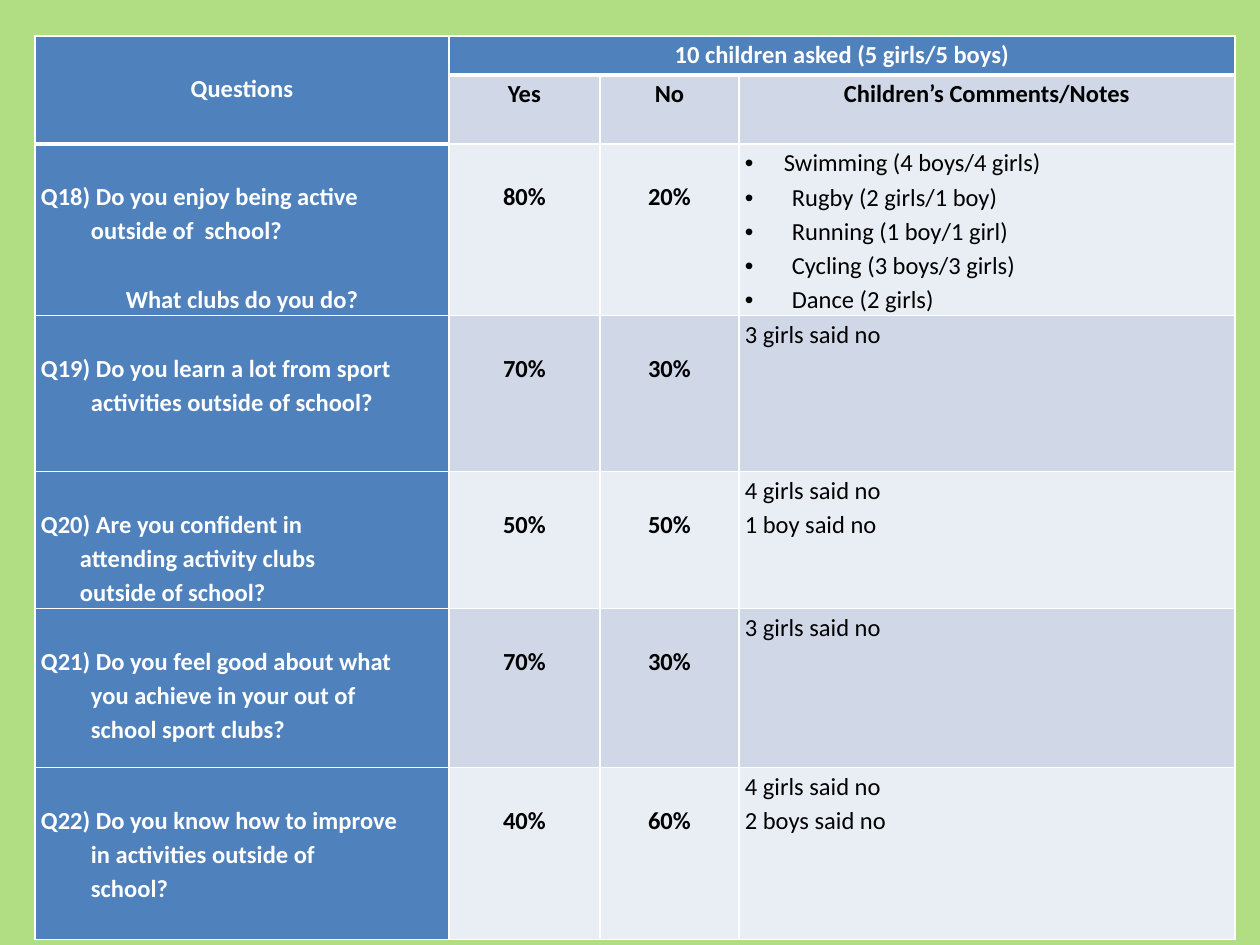
"""Build a slide with a table of children's answers about sport outside school."""

import dataclasses

import lxml.etree
import pptx
import pptx.dml.color
import pptx.enum.text
import pptx.oxml.ns
import pptx.table
import pptx.util

SCALE = 9144000 / 1260
FONT = "Calibri"
SIZE = 14
LINE = 34
COLUMNS = [414, 151, 139, 496]
ROWS = [39, 69, 171, 156, 137, 159, 172]
COLORS = {
    "page": "B2DE83",
    "header": "4F81BD",
    "dark band": "D0D8E8",
    "light band": "E9EDF4",
    "white": "FFFFFF",
    "black": "000000",
}
CENTER = pptx.enum.text.PP_ALIGN.CENTER
LEFT = pptx.enum.text.PP_ALIGN.LEFT


@dataclasses.dataclass(frozen=True)
class Line:
    text: str
    margin: int = 0
    bullet: bool = False
    centered: bool = False
    before: int = 0


@dataclasses.dataclass(frozen=True)
class Style:
    fill: str
    color: str = "black"
    bold: bool = True
    top: int = 0
    border_top: int = 1
    border_bottom: int = 1


@dataclasses.dataclass(frozen=True)
class Question:
    lines: list[Line]
    yes: int
    comments: list[Line]


QUESTIONS = [
    Question(
        [
            Line("Q18) Do you enjoy being active"),
            Line("outside of  school?", 50),
            Line("What clubs do you do?", centered=True, before=LINE),
        ],
        80,
        [
            Line("Swimming (4 boys/4 girls)", 39, True),
            Line("Rugby (2 girls/1 boy)", 47, True),
            Line("Running (1 boy/1 girl)", 47, True),
            Line("Cycling (3 boys/3 girls)", 47, True),
            Line("Dance (2 girls)", 47, True),
        ],
    ),
    Question(
        [
            Line("Q19) Do you learn a lot from sport"),
            Line("activities outside of school?", 50),
        ],
        70,
        [Line("3 girls said no")],
    ),
    Question(
        [
            Line("Q20) Are you confident in"),
            Line("attending activity clubs", 39),
            Line("outside of school?", 39),
        ],
        50,
        [Line("4 girls said no"), Line("1 boy said no")],
    ),
    Question(
        [
            Line("Q21) Do you feel good about what"),
            Line("you achieve in your out of", 50),
            Line("school sport clubs?", 50),
        ],
        70,
        [Line("3 girls said no")],
    ),
    Question(
        [
            Line("Q22) Do you know how to improve"),
            Line("in activities outside of", 50),
            Line("school?", 50),
        ],
        40,
        [Line("4 girls said no"), Line("2 boys said no")],
    ),
]


def px(length: int) -> pptx.util.Emu:
    return pptx.util.Emu(round(length * SCALE))


def rgb(name: str) -> pptx.dml.color.RGBColor:
    return pptx.dml.color.RGBColor.from_string(COLORS[name])


def add_child(parent, tag: str, **attributes: str):
    return lxml.etree.SubElement(parent, pptx.oxml.ns.qn(tag), attributes)


def format_cell(cell: pptx.table._Cell, style: Style) -> None:
    properties = cell._tc.get_or_add_tcPr()
    widths = {"L": 1, "R": 1, "T": style.border_top, "B": style.border_bottom}
    for side, width in widths.items():
        border = add_child(properties, f"a:ln{side}", w=str(pptx.util.Pt(width)))
        fill = add_child(border, "a:solidFill")
        add_child(fill, "a:srgbClr", val=COLORS["white"])
    cell.fill.solid()
    cell.fill.fore_color.rgb = rgb(style.fill)
    cell.margin_left = cell.margin_right = px(6)
    cell.margin_top, cell.margin_bottom = px(style.top), 0


def write_cell(cell: pptx.table._Cell, lines: list[Line], style: Style) -> None:
    format_cell(cell, style)
    frame = cell.text_frame
    for index, line in enumerate(lines):
        para = frame.add_paragraph() if index else frame.paragraphs[0]
        para.text = line.text
        para.alignment = CENTER if line.centered else LEFT
        para.line_spacing = 1.15
        para.space_before = px(line.before)
        properties = para._p.get_or_add_pPr()
        properties.set("marL", str(px(line.margin)))
        properties.set("indent", str(px(-line.margin if line.bullet else 0)))
        if line.bullet:
            add_child(properties, "a:buFont", typeface="Arial")
            add_child(properties, "a:buChar", char="•")
        para.font.name = FONT
        para.font.size = pptx.util.Pt(SIZE)
        para.font.bold = style.bold
        para.font.color.rgb = rgb(style.color)


def write_headings(table: pptx.table.Table) -> None:
    header = Style("header", "white", border_bottom=3)
    for column in range(len(COLUMNS)):
        format_cell(table.cell(0, column), header)
    format_cell(table.cell(1, 0), header)
    table.cell(0, 0).merge(table.cell(1, 0))
    table.cell(0, 1).merge(table.cell(0, 3))
    titles = {
        (0, 0): ("Questions", dataclasses.replace(header, top=LINE)),
        (0, 1): ("10 children asked (5 girls/5 boys)", header),
    }
    for column, text in enumerate(["Yes", "No", "Children’s Comments/Notes"], 1):
        titles[1, column] = (text, Style("dark band", border_top=3))
    for (row, column), (text, style) in titles.items():
        write_cell(table.cell(row, column), [Line(text, centered=True)], style)


def write_question(table: pptx.table.Table, row: int, question: Question) -> None:
    band = "dark band" if row % 2 else "light band"
    border = 3 if row == 2 else 1
    asked = Style("header", "white", top=LINE, border_top=border)
    write_cell(table.cell(row, 0), question.lines, asked)
    for column, share in enumerate([question.yes, 100 - question.yes], 1):
        line = Line(f"{share}%", centered=True)
        write_cell(table.cell(row, column), [line], Style(band, top=LINE))
    write_cell(table.cell(row, 3), question.comments, Style(band, bold=False))


def main() -> None:
    deck = pptx.Presentation()
    deck.slide_width, deck.slide_height = px(1260), px(945)
    page = deck.slides.add_slide(deck.slide_layouts[6])
    page.background.fill.solid()
    page.background.fill.fore_color.rgb = rgb("page")
    table = page.shapes.add_table(
        len(ROWS), len(COLUMNS), px(35), px(36), px(sum(COLUMNS)), px(sum(ROWS))
    ).table
    table.first_row = table.horz_banding = False
    for column, width in zip(table.columns, COLUMNS):
        column.width = px(width)
    for row, height in zip(table.rows, ROWS):
        row.height = px(height)
    write_headings(table)
    for row, question in enumerate(QUESTIONS, 2):
        write_question(table, row, question)
    deck.save("out.pptx")


if __name__ == "__main__":
    main()
